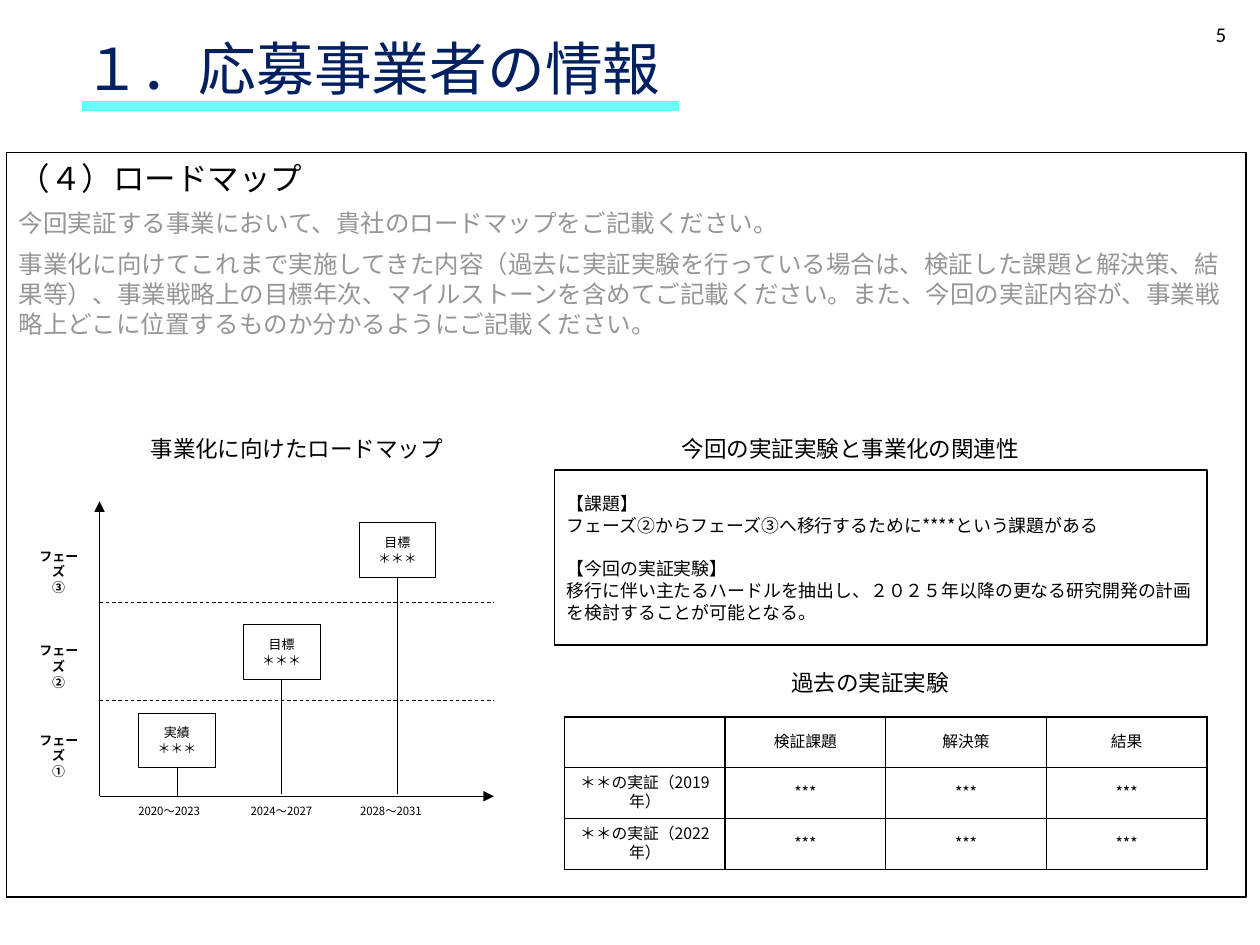
from dataclasses import dataclass

from lxml.etree import SubElement
from pptx import Presentation
from pptx.dml.color import RGBColor as RGB
from pptx.enum.dml import MSO_LINE as Dash
from pptx.enum.shapes import MSO_CONNECTOR as Conn, MSO_SHAPE as Kind
from pptx.enum.text import MSO_ANCHOR as Anchor, MSO_AUTO_SIZE as Auto, PP_ALIGN as Align
from pptx.oxml.ns import qn
from pptx.util import Inches, Pt


@dataclass(frozen=True)
class Theme:
    """Colours, fonts and type sizes."""
    navy: str = "002060"
    aqua: str = "66FFFF"
    black: str = "000000"
    gray: str = "969696"
    white: str = "FFFFFF"
    latin: str = "Calibri"
    asian: str = "Noto Sans CJK JP"
    title: float = 33
    head: float = 18
    body: float = 14
    sub: float = 12.9
    page: float = 12
    info: float = 10.2
    cell: float = 9
    tag: float = 7.4
    date: float = 6.5
    lead: float = 1.22
    thin: float = 0.5


T = Theme()


def inches(*nums):
    """Turn numbers into lengths."""
    return [Inches(n) for n in nums]


def write(par, text, size, color=T.black, font=T.asian, bold=False, align=Align.LEFT, gap=0, lead=T.lead):
    """Add one run to a paragraph and format both."""
    run = par.add_run()
    run.text = text
    run.font.size, run.font.name, run.font.bold = Pt(size), font, bold
    run.font.color.rgb = RGB.from_string(color)
    SubElement(run.font._element, qn("a:ea")).set("typeface", T.asian)
    par.alignment = align
    par.space_before, par.space_after = Pt(gap), Pt(0)
    par.line_spacing = Pt(round(size * lead, 1))


def lines(frame, texts, size, **look):
    """Fill a frame with one paragraph per text."""
    frame.word_wrap = True
    for i, text in enumerate(texts):
        par = frame.add_paragraph() if i else frame.paragraphs[0]
        write(par, text, size, **look)


def label(slide, box, texts, size, **look):
    """Place a text box."""
    frame = slide.shapes.add_textbox(*inches(*box)).text_frame
    frame.margin_right = 0 if look.get("align", Align.LEFT) == Align.LEFT else Inches(0.1)
    lines(frame, texts, size, **look)


def panel(slide, box, width):
    """Place a white rectangle with a black outline."""
    shape = slide.shapes.add_shape(Kind.RECTANGLE, *inches(*box))
    shape.shadow.inherit = False
    shape.fill.solid()
    shape.fill.fore_color.rgb = RGB.from_string(T.white)
    shape.line.color.rgb = RGB.from_string(T.black)
    shape.line.width = Pt(width)
    shape.text_frame.vertical_anchor = Anchor.MIDDLE
    return shape


def rule(slide, start, end, color=T.black, width=T.thin, dash=False, arrow=False):
    """Draw a straight line."""
    link = slide.shapes.add_connector(Conn.STRAIGHT, *inches(*start, *end))
    link.line.color.rgb = RGB.from_string(color)
    link.line.width = Pt(width)
    if dash:
        link.line.dash_style = Dash.DASH
    if arrow:
        SubElement(link.line._ln, qn("a:tailEnd")).set("type", "triangle")
    SubElement(link._element.spPr, qn("a:effectLst"))
    return link


def place(shape, box):
    """Move a placeholder and set its frame up."""
    shape.left, shape.top, shape.width, shape.height = inches(*box)
    frame = shape.text_frame
    frame.auto_size, frame.vertical_anchor = Auto.NONE, Anchor.TOP
    return frame


def header(slide, box):
    """Title, its underline and the page number."""
    x, y, w, h = box
    frame = place(slide.shapes.title, box)
    lines(frame, ["１．応募事業者の情報"], T.title, color=T.navy, font=T.latin, lead=1.1)
    base = y + 0.58
    rule(slide, (x + 0.09, base), (x + 4.83, base), T.aqua, 6)
    label(slide, (x + 7.02, y - 0.14, 2.25, 0.4), ["5"], T.page, font=T.latin, align=Align.RIGHT)


def brief(slide, box):
    """Outlined body with the heading and the guidance."""
    shape = slide.placeholders[1]
    frame = place(shape, box)
    shape.line.color.rgb = RGB.from_string(T.black)
    shape.line.width = Pt(0.75)
    lines(frame, ["（４）ロードマップ"], T.head)
    for text in (
        "今回実証する事業において、貴社のロードマップをご記載ください。",
        "事業化に向けてこれまで実施してきた内容（過去に実証実験を行っている場合は、検証した課題と解決策、結果等）、"
        "事業戦略上の目標年次、マイルストーンを含めてご記載ください。"
        "また、今回の実証内容が、事業戦略上どこに位置するものか分かるようにご記載ください。",
    ):
        write(frame.add_paragraph(), text, T.body, color=T.gray, gap=6)
    for par in frame.paragraphs:
        props = par._p.get_or_add_pPr()
        props.set("marL", "0")
        props.set("indent", "0")
        SubElement(props, qn("a:buNone"))


def roadmap(slide, box):
    """Axes, phases and milestones."""
    x, y, w, h = box
    base = y + h
    label(slide, (x, y - 0.58, w, 0.35), ["事業化に向けたロードマップ"], T.sub, align=Align.CENTER)
    rule(slide, (x, base), (x, y), arrow=True)
    rule(slide, (x, base), (x + w, base), arrow=True)
    for drop in (0.8, 1.58):
        rule(slide, (x, y + drop), (x + w, y + drop), dash=True)
    for mark, drop in (("③", 0.32), ("②", 1.07), ("①", 1.78)):
        label(slide, (x - 0.62, y + drop, 0.59, 0.39), ["フェーズ", mark], T.tag, bold=True, align=Align.CENTER)
    steps = (
        ("実績", "2020～2023", 0.31, 1.68, 0.21, 0),
        ("目標", "2024～2027", 1.14, 0.98, 1.1, 0.02),
        ("目標", "2028～2031", 2.06, 0.17, 1.97, 0.02),
    )
    for name, span, left, drop, date, rise in steps:
        card = panel(slide, (x + left, y + drop, 0.61, 0.43), T.thin)
        lines(card.text_frame, [name, "＊＊＊"], T.tag, align=Align.CENTER)
        mid = x + left + 0.305
        rule(slide, (mid, y + drop + 0.43), (mid, base - rise)).begin_connect(card, 2)
        label(slide, (x + date, base + 0.01, 0.82, 0.21), [span], T.date)


def relation(slide, box):
    """How the trial relates to the business."""
    x, y, w, h = box
    label(slide, (x + 0.64, y - 0.33, 3.42, 0.32), ["今回の実証実験と事業化の関連性"], T.sub, align=Align.CENTER)
    frame = panel(slide, box, 1).text_frame
    lines(frame, ["【課題】", "フェーズ②からフェーズ③へ移行するために****という課題がある"], T.info)
    write(frame.add_paragraph(), "【今回の実証実験】", T.info, gap=T.info * T.lead)
    write(frame.add_paragraph(),
          "移行に伴い主たるハードルを抽出し、２０２５年以降の更なる研究開発の計画を検討することが可能となる。", T.info)


def edge(cell):
    """Give a cell black borders and a white fill."""
    props = cell._tc.get_or_add_tcPr()
    for side in ("lnL", "lnR", "lnT", "lnB"):
        line = SubElement(props, qn(f"a:{side}"), w=str(Pt(1)))
        SubElement(SubElement(line, qn("a:solidFill")), qn("a:srgbClr")).set("val", T.black)
    cell.fill.solid()
    cell.fill.fore_color.rgb = RGB.from_string(T.white)


def history(slide, box):
    """Table of past trials."""
    x, y, w, h = box
    label(slide, (x + 1.02, y - 0.43, 2.81, 0.32), ["過去の実証実験"], T.sub, align=Align.CENTER)
    rows = [["", "検証課題", "解決策", "結果"]]
    rows += [[f"＊＊の実証（{year}年）"] + ["***"] * 3 for year in (2019, 2022)]
    grid = slide.shapes.add_table(3, 4, *inches(*box)).table
    for col in grid.columns:
        col.width = Inches(w / 4)
    for row, tall, texts in zip(grid.rows, (0.35, 0.4, 0.4), rows):
        row.height = Inches(tall)
        for cell, text in zip(row.cells, texts):
            edge(cell)
            cell.vertical_anchor = Anchor.MIDDLE
            if text:
                lines(cell.text_frame, [text], T.cell, align=Align.CENTER)


def main():
    """Build the slide and save it."""
    deck = Presentation()
    deck.slide_width, deck.slide_height = inches(10, 7.5)
    slide = deck.slides.add_slide(deck.slide_layouts[1])
    header(slide, (0.56, 0.26, 8.61, 0.84))
    brief(slide, (0.05, 1.21, 9.84, 5.91))
    roadmap(slide, (0.79, 3.98, 3.13, 2.34))
    relation(slide, (4.4, 3.73, 5.18, 1.39))
    history(slide, (4.48, 5.69, 5.1, 1.15))
    deck.save("out.pptx")


if __name__ == "__main__":
    main()
